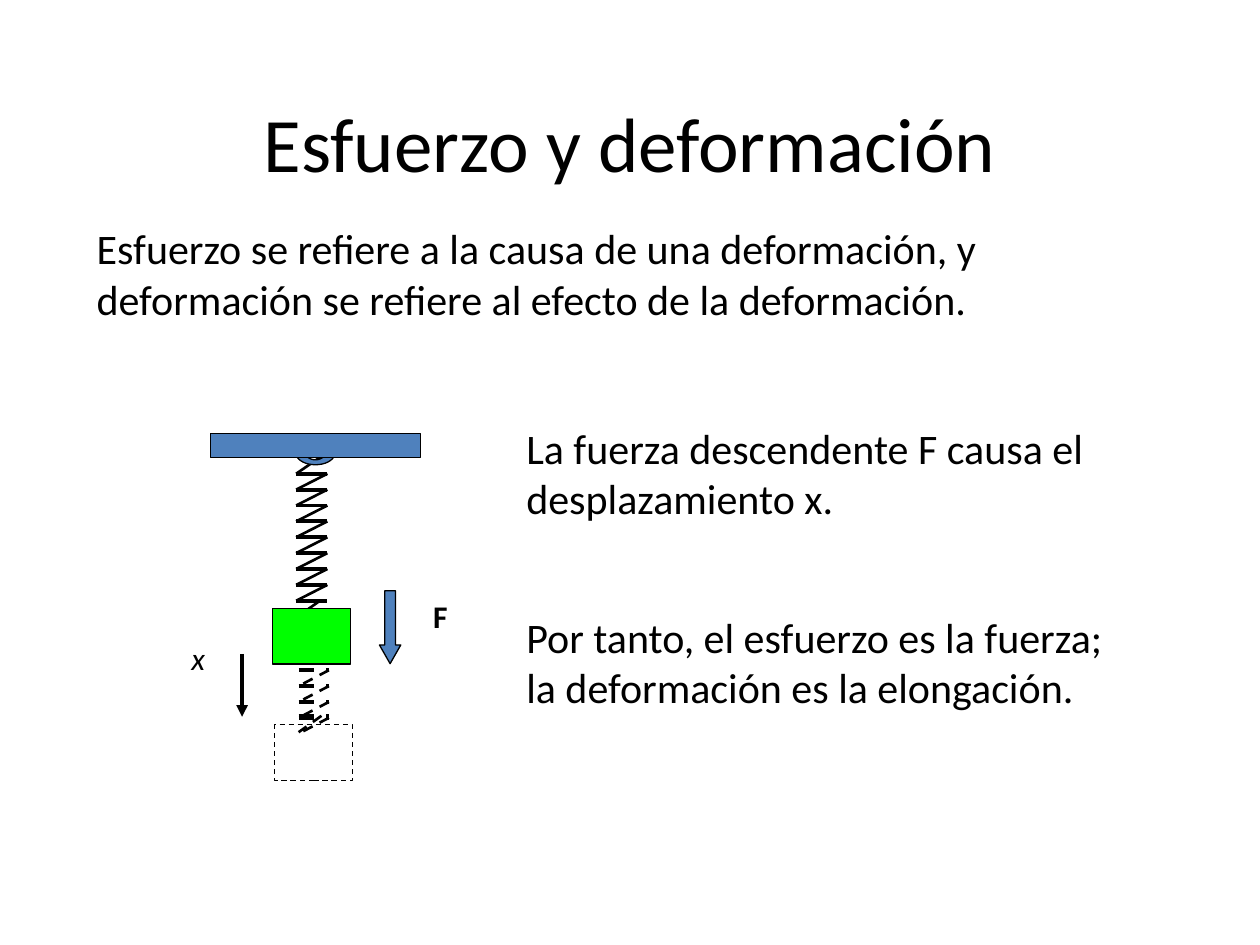
import math
from dataclasses import dataclass

import pptx
import pptx.dml.color
import pptx.enum.dml
import pptx.enum.shapes
import pptx.enum.text
import pptx.oxml.ns
import pptx.util
from lxml import etree

Cm = pptx.util.Cm
SHAPES = pptx.enum.shapes.MSO_SHAPE
COLORS = {"ink": "000000", "steel": "4F81BD", "mass": "00FF00"}


@dataclass
class Label:
    text: str
    left: float
    top: float
    width: float
    height: float
    size: int = 24
    inset: float = 0.25
    bold: bool = False
    italic: bool = False
    centered: bool = False


@dataclass
class Block:
    preset: pptx.enum.shapes.MSO_SHAPE
    left: float
    top: float
    width: float
    height: float
    fill: str = ""
    dashed: bool = False


@dataclass
class Spring:
    left: float
    right: float
    top: float
    rungs: int
    diagonals: int
    dashed: bool = False
    pitch: float = 0.32


LABELS = [
    Label("Esfuerzo y deformación", 2.54, 1.27, 20.32, 3.18, size=44, centered=True),
    Label("Esfuerzo se refiere a la causa de una deformación, y deformación "
          "se refiere al efecto de la deformación.", 1.7, 4.24, 22.02, 2.57),
    Label("x", 3.61, 12.75, 1.27, 1.45, size=18, inset=0.25, italic=True),
    Label("F", 8.48, 11.91, 1.47, 1.45, size=18, inset=0.25, bold=True),
    Label("La fuerza descendente F causa el desplazamiento x.",
          10.36, 8.26, 11.86, 2.57),
    Label("Por tanto, el esfuerzo es la fuerza; la deformación es la elongación.",
          10.36, 12.07, 12.5, 2.57),
]


def color(name: str) -> pptx.dml.color.RGBColor:
    return pptx.dml.color.RGBColor.from_string(COLORS[name])


def style_line(line, width: float, dashed: bool = False) -> None:
    line.color.rgb = color("ink")
    line.width = pptx.util.Pt(width)
    if dashed:
        line.dash_style = pptx.enum.dml.MSO_LINE.DASH


def add_label(page, label: Label) -> None:
    box = page.shapes.add_textbox(
        Cm(label.left), Cm(label.top), Cm(label.width), Cm(label.height))
    frame = box.text_frame
    frame.word_wrap = True
    frame.margin_left = frame.margin_right = Cm(label.inset)
    frame.margin_top = frame.margin_bottom = Cm(label.inset if label.size > 18 else 0.13)
    frame.text = label.text
    para = frame.paragraphs[0]
    if label.centered:
        frame.vertical_anchor = pptx.enum.text.MSO_ANCHOR.MIDDLE
        para.alignment = pptx.enum.text.PP_ALIGN.CENTER
    font = para.runs[0].font
    font.name = "Calibri"
    font.size = pptx.util.Pt(label.size)
    font.bold = label.bold
    font.italic = label.italic
    font.color.rgb = color("ink")


def add_block(page, block: Block):
    shape = page.shapes.add_shape(
        block.preset, Cm(block.left), Cm(block.top), Cm(block.width), Cm(block.height))
    finish_shape(shape, block.fill, block.dashed)
    return shape


def finish_shape(shape, fill: str, dashed: bool = False) -> None:
    shape.shadow.inherit = False
    if fill:
        shape.fill.solid()
        shape.fill.fore_color.rgb = color(fill)
    else:
        shape.fill.background()
    style_line(shape.line, 0.75, dashed)


def add_line(page, x1: float, y1: float, x2: float, y2: float,
             width: float, dashed: bool = False, arrow: bool = False) -> None:
    line = page.shapes.add_connector(
        pptx.enum.shapes.MSO_CONNECTOR.STRAIGHT, Cm(x1), Cm(y1), Cm(x2), Cm(y2))
    style_line(line.line, width, dashed)
    if arrow:
        tail = etree.SubElement(line.line._get_or_add_ln(), pptx.oxml.ns.qn("a:tailEnd"))
        tail.set("type", "triangle")
    etree.SubElement(line._element.spPr, pptx.oxml.ns.qn("a:effectLst"))


def add_spring(page, spring: Spring) -> None:
    levels = [spring.top + spring.pitch * i for i in range(spring.rungs)]
    for y in levels:
        add_line(page, spring.left, y, spring.right, y, 2.25, spring.dashed)
    for y in levels[:spring.diagonals]:
        add_line(page, spring.right, y, spring.left, y + spring.pitch, 1.5, spring.dashed)


def add_hook(page, x: float, y: float) -> None:
    angles = [math.radians(step) for step in range(0, 181, 10)]
    outer = [(x + 0.39 * math.cos(a), y + 0.23 * math.sin(a)) for a in angles]
    inner = [(x + 0.19 * math.cos(a), y + 0.13 * math.sin(a)) for a in reversed(angles)]
    points = [(Cm(px), Cm(py)) for px, py in outer + inner]
    builder = page.shapes.build_freeform(*points[0])
    builder.add_line_segments(points[1:], close=True)
    finish_shape(builder.convert_to_shape(), "steel")


def draw_diagram(page) -> None:
    add_line(page, 6.45, 12.11, 5.97, 12.45, 1.5)
    add_line(page, 6.45, 9.22, 5.97, 9.55, 1.5)
    add_hook(page, 6.36, 9.14)
    add_block(page, Block(SHAPES.RECTANGLE, 4.24, 8.74, 4.24, 0.48, "steel"))
    add_spring(page, Spring(5.97, 6.6, 9.55, rungs=9, diagonals=8))
    add_block(page, Block(SHAPES.RECTANGLE, 5.5, 12.27, 1.57, 1.12, "mass"))
    add_spring(page, Spring(6.02, 6.63, 13.51, rungs=4, diagonals=4, dashed=True))
    add_line(page, 6.48, 14.43, 6.02, 14.76, 1.5, dashed=True)
    add_line(page, 6.02, 14.43, 6.63, 14.43, 2.25, dashed=True)
    add_block(page, Block(SHAPES.RECTANGLE, 5.54, 14.61, 1.57, 1.12, dashed=True))
    force = add_block(page, Block(SHAPES.DOWN_ARROW, 7.65, 11.91, 0.43, 1.47, "steel"))
    force.adjustments[0] = 0.5
    force.adjustments[1] = 0.875
    add_line(page, 4.88, 13.18, 4.88, 14.45, 2.25, arrow=True)


def main() -> None:
    deck = pptx.Presentation()
    deck.slide_width = Cm(25.4)
    deck.slide_height = Cm(19.05)
    page = deck.slides.add_slide(deck.slide_layouts[6])
    draw_diagram(page)
    for label in LABELS:
        add_label(page, label)
    deck.save("out.pptx")


if __name__ == "__main__":
    main()
